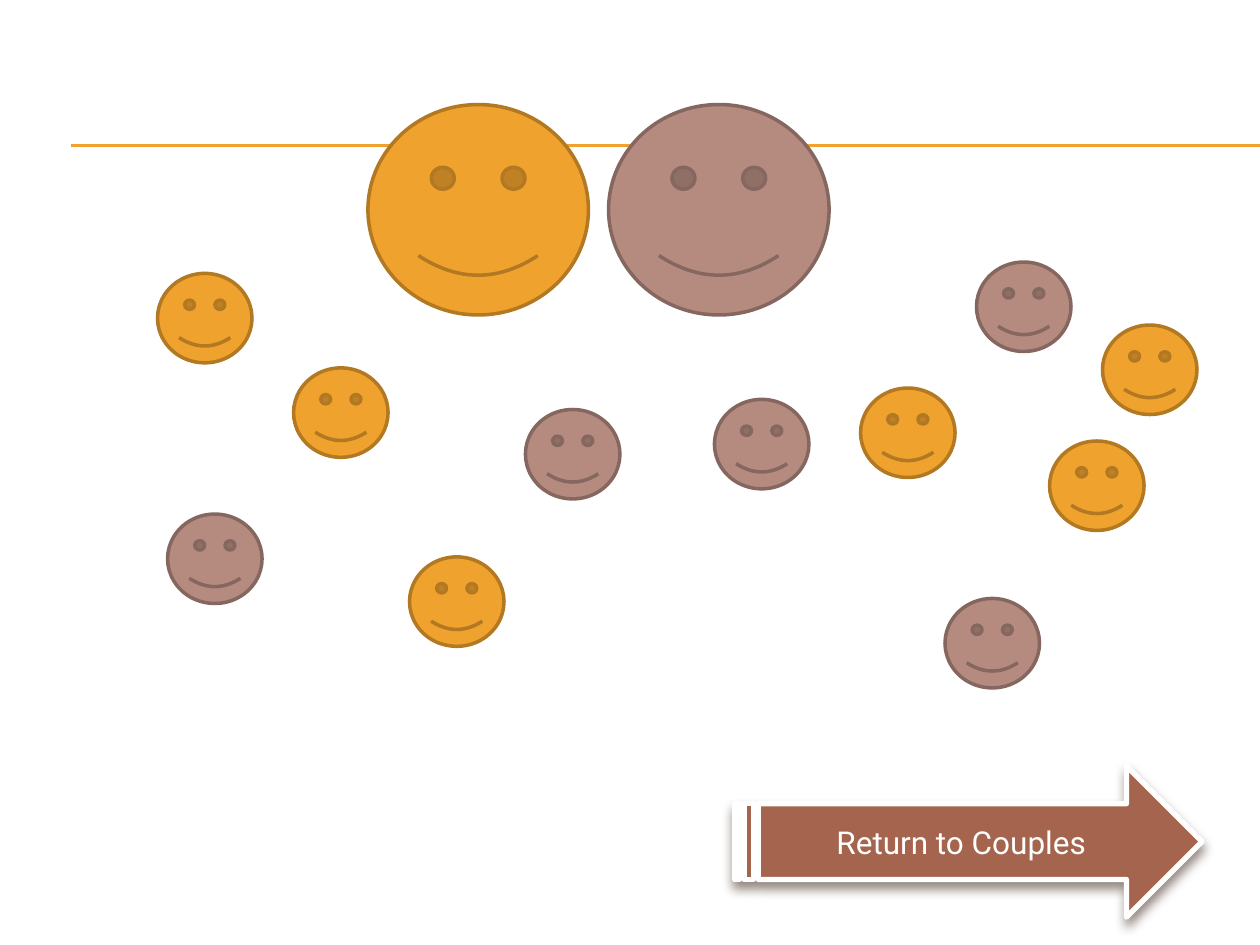
from lxml import etree
from pptx import Presentation
from pptx.dml import color
from pptx.enum import shapes, text
from pptx.oxml import ns
from pptx.util import Inches, Pt

GOLD = ("F0A22E", "B27822")
MAUVE = ("B58B80", "86675F")
COUPLE = [(2.92, 0.83, GOLD), (4.83, 0.83, MAUVE)]
CROWD = [
    (4.17, 3.25, MAUVE), (5.67, 3.17, MAUVE), (7.75, 2.08, MAUVE),
    (8.33, 3.5, GOLD), (6.83, 3.08, GOLD), (7.5, 4.75, MAUVE),
    (1.25, 2.17, GOLD), (3.25, 4.42, GOLD), (2.33, 2.92, GOLD),
    (1.33, 4.08, MAUVE), (8.75, 2.58, GOLD),
]


def rgb(value):
    return color.RGBColor.from_string(value)


def style_line(line, value, width):
    line.color.rgb = rgb(value)
    line.width = Pt(width)


def add_rule(slide, y):
    rule = slide.shapes.add_connector(
        shapes.MSO_CONNECTOR.STRAIGHT, Inches(0.56), Inches(y), Inches(10), Inches(y))
    style_line(rule.line, "F0A22E", 0.75)
    etree.SubElement(rule._element.spPr, ns.qn("a:effectLst"))


def add_figure(slide, preset, box, fill, outline, width):
    figure = slide.shapes.add_shape(preset, *map(Inches, box))
    figure.fill.solid()
    figure.fill.fore_color.rgb = rgb(fill)
    style_line(figure.line, outline, width)
    figure.shadow.inherit = False
    return figure


def add_faces(slide, places, size):
    for left, top, (fill, outline) in places:
        add_figure(slide, shapes.MSO_SHAPE.SMILEY_FACE, (left, top, *size), fill, outline, 2)


def cast_shadow(figure, value, opacity, blur, distance, angle):
    effects = figure._element.spPr.find(ns.qn("a:effectLst"))
    shadow = etree.SubElement(effects, ns.qn("a:outerShdw"), {
        "blurRad": str(Pt(blur)), "dist": str(Pt(distance)),
        "dir": str(angle * 60000), "rotWithShape": "0"})
    tint = etree.SubElement(shadow, ns.qn("a:srgbClr"), val=value)
    etree.SubElement(tint, ns.qn("a:alpha"), val=str(opacity * 1000))


def write_label(figure, wording):
    frame = figure.text_frame
    frame.word_wrap = True
    frame.vertical_anchor = text.MSO_ANCHOR.MIDDLE
    paragraph = frame.paragraphs[0]
    paragraph.alignment = text.PP_ALIGN.CENTER
    label = paragraph.add_run()
    label.text = wording
    for name, value in {"size": Pt(18), "name": "Roboto"}.items():
        setattr(label.font, name, value)
    label.font.color.rgb = rgb("FFFFFF")


def main():
    deck = Presentation()
    deck.slide_width, deck.slide_height = Inches(10), Inches(7.5)
    slide = deck.slides.add_slide(deck.slide_layouts[6])
    for y in (1.15, 1.16):
        add_rule(slide, y)
    add_faces(slide, COUPLE, (1.75, 1.67))
    add_faces(slide, CROWD, (0.75, 0.71))
    return_arrow = add_figure(
        slide, shapes.MSO_SHAPE.STRIPED_RIGHT_ARROW, (5.83, 6.08, 3.71, 1.2),
        "A5644E", "FFFFFF", 3)
    cast_shadow(return_arrow, "4E3B30", 60, 6, 4, 90)
    write_label(return_arrow, "Return to Couples")
    deck.save("out.pptx")


if __name__ == "__main__":
    main()
